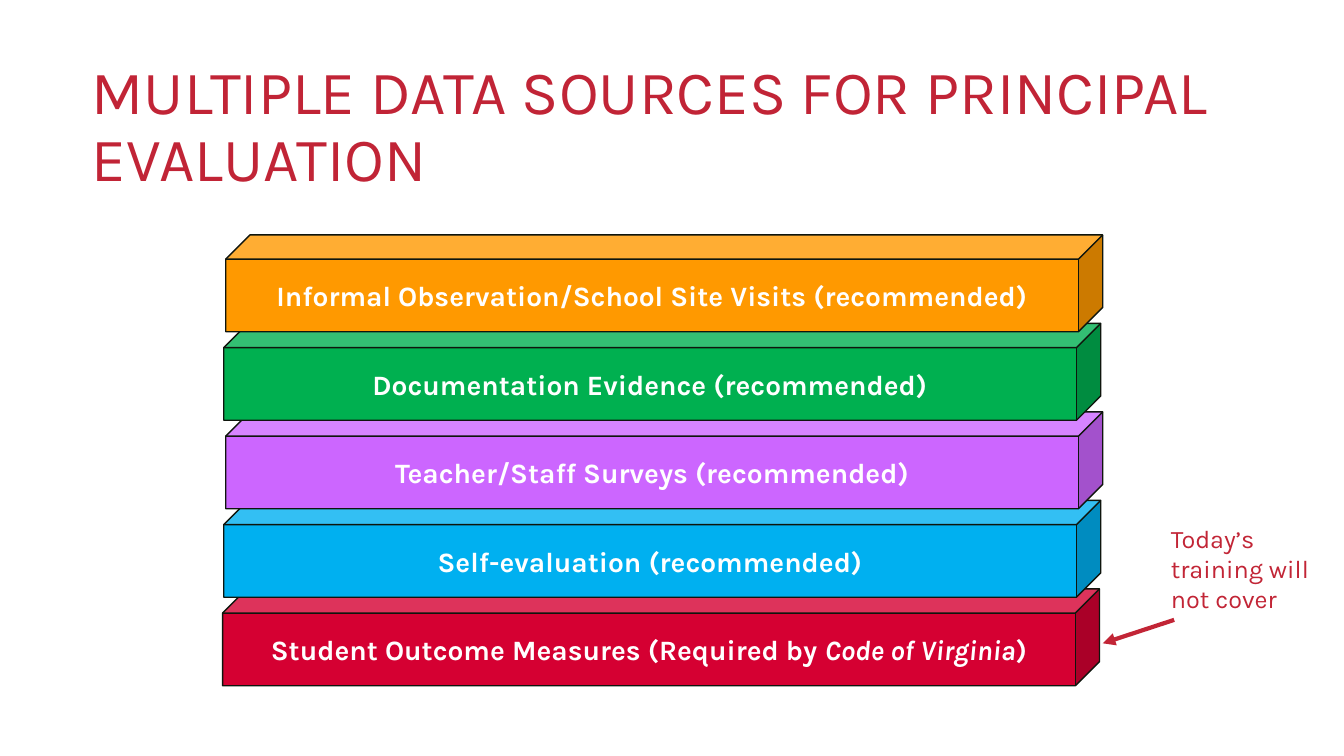
from dataclasses import dataclass

from lxml.etree import SubElement
from pptx import Presentation
from pptx.dml.color import RGBColor
from pptx.enum.shapes import MSO_CONNECTOR, MSO_SHAPE
from pptx.enum.text import MSO_ANCHOR, MSO_AUTO_SIZE, PP_ALIGN
from pptx.oxml.ns import qn
from pptx.util import Cm, Pt


@dataclass(frozen=True)
class Theme:
    font: str = "Karla"
    title_color: str = "C12436"
    note_color: str = "C22536"
    label_color: str = "FFFFFF"
    outline: str = "0F150D"
    title_size: int = 44
    label_size: int = 20
    note_size: int = 18


THEME = Theme()
TITLE = "MULTIPLE DATA SOURCES FOR PRINCIPAL EVALUATION"
NOTE = "Today’s training will not cover"

# Top to bottom: fill, sideways offset in cm, runs as (text, italic)
DATA_SOURCES = [
    ("FF9900", 0.08, [("Informal Observation/School Site Visits (recommended)", False)]),
    ("00B050", 0.03, [("Documentation Evidence (recommended)", False)]),
    ("CC66FF", 0.08, [("Teacher/Staff Surveys (recommended)", False)]),
    ("00B0F0", 0.03, [("Self-evaluation (recommended)", False)]),
    ("D50032", 0, [("Student Outcome Measures (Required by ", False),
                   ("Code of Virginia", True), (")", False)]),
]


def color(value):
    return RGBColor.from_string(value)


def add_run(paragraph, text, size, text_color, bold=False, italic=False):
    run = paragraph.add_run()
    run.text = text
    run.font.name = THEME.font
    run.font.size = Pt(size)
    run.font.bold = bold
    run.font.italic = italic
    run.font.color.rgb = color(text_color)


def fill_title(slide, left, top, width, height):
    title = slide.shapes.title
    title.left, title.top, title.width, title.height = map(Cm, (left, top, width, height))
    frame = title.text_frame
    frame.word_wrap = True
    frame.auto_size = MSO_AUTO_SIZE.NONE
    frame.vertical_anchor = MSO_ANCHOR.TOP
    paragraph = frame.paragraphs[0]
    paragraph.alignment = PP_ALIGN.LEFT
    paragraph.line_spacing = 0.9
    add_run(paragraph, TITLE, THEME.title_size, THEME.title_color)


def add_block(group, left, top, width, height, fill, runs):
    block = group.shapes.add_shape(
        MSO_SHAPE.CUBE, Cm(left), Cm(top), Cm(width), Cm(height))
    block.adjustments[0] = 0.25
    block.shadow.inherit = False
    block.fill.solid()
    block.fill.fore_color.rgb = color(fill)
    block.line.color.rgb = color(THEME.outline)
    block.line.width = Pt(1)
    frame = block.text_frame
    frame.word_wrap = True
    frame.vertical_anchor = MSO_ANCHOR.MIDDLE
    paragraph = frame.paragraphs[0]
    paragraph.alignment = PP_ALIGN.CENTER
    for text, italic in runs:
        add_run(paragraph, text, THEME.label_size, THEME.label_color, True, italic)


def add_stack(slide, left, top, width, height):
    block_height = 2.44
    block_width = width - max(offset for _, offset, _ in DATA_SOURCES)
    pitch = (height - block_height) / (len(DATA_SOURCES) - 1)
    group = slide.shapes.add_group_shape()
    # The lowest block goes first, so each one overlaps the block below it
    for index, (fill, offset, runs) in reversed(list(enumerate(DATA_SOURCES))):
        add_block(group, left + offset, top + index * pitch,
                  block_width, block_height, fill, runs)


def add_note(slide, left, top, width, height):
    # Arrow from below the note to the lowest block
    arrow = slide.shapes.add_connector(
        MSO_CONNECTOR.STRAIGHT, Cm(left + 0.33), Cm(top + height + 0.06),
        Cm(left - 1.47), Cm(top + height + 0.65))
    arrow.line.color.rgb = color(THEME.note_color)
    arrow.line.width = Pt(3)
    SubElement(arrow.line._get_or_add_ln(), qn("a:tailEnd"), type="triangle")
    SubElement(arrow._element.spPr, qn("a:effectLst"))

    # Note text
    note = slide.shapes.add_textbox(Cm(left), Cm(top), Cm(width), Cm(height))
    note.text_frame.word_wrap = True
    add_run(note.text_frame.paragraphs[0], NOTE, THEME.note_size, THEME.note_color)


def main():
    presentation = Presentation()
    presentation.slide_width = Cm(33.87)
    presentation.slide_height = Cm(19.05)
    slide = presentation.slides.add_slide(presentation.slide_layouts[5])
    fill_title(slide, 2.06, 1.42, 29.21, 3.68)
    add_stack(slide, 5.61, 5.92, 22.18, 11.36)
    add_note(slide, 29.26, 13.06, 4.6, 2.5)
    presentation.save("out.pptx")


if __name__ == "__main__":
    main()
